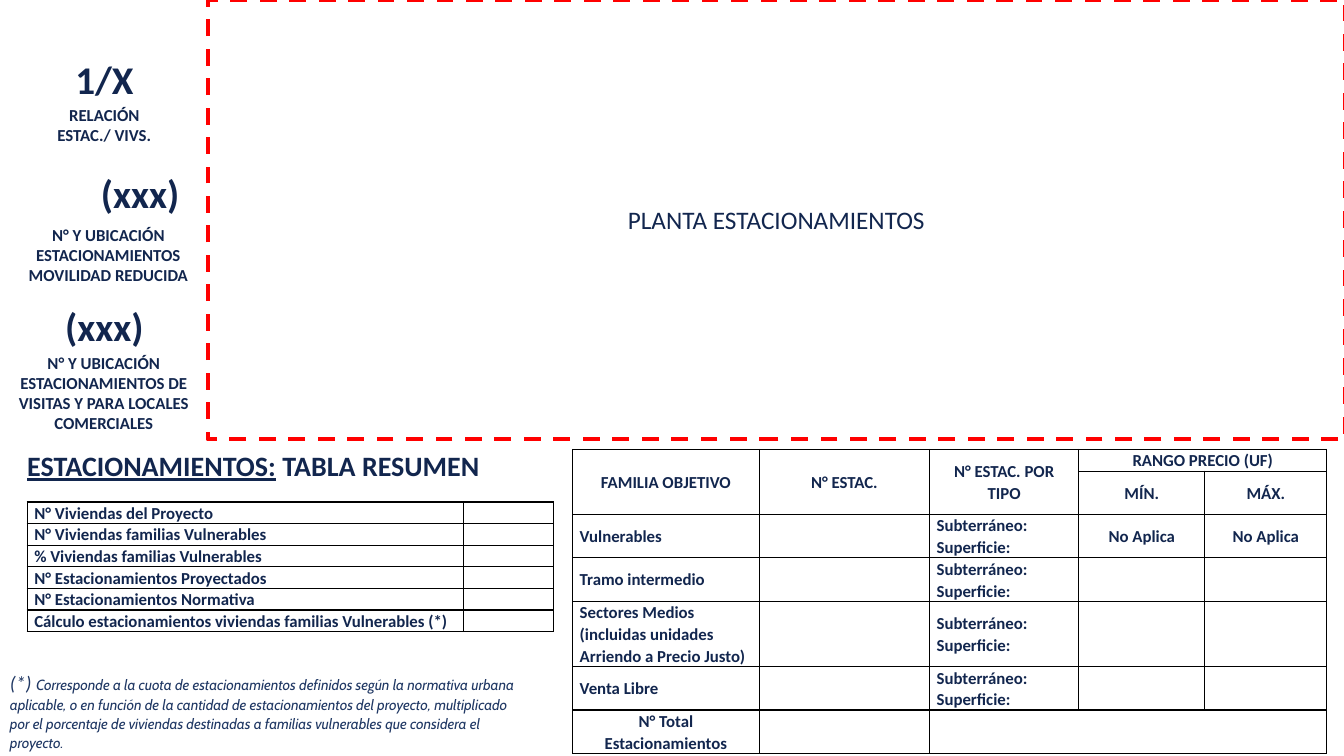
"""Build the parking summary slide with its plan area and two tables."""
from lxml.etree import SubElement
from pptx import Presentation
from pptx.dml.color import RGBColor as RGB
from pptx.enum.dml import MSO_LINE
from pptx.enum.shapes import MSO_SHAPE as Shape
from pptx.enum.text import MSO_ANCHOR as Anchor, MSO_AUTO_SIZE as Auto, PP_ALIGN as Align
from pptx.oxml.ns import qn
from pptx.util import Inches, Pt

COLORS = {"navy": "12264E", "note": "203864", "red": "FF0000", "black": "000000"}
FONT = "Calibri"
PLAN = "PLANTA ESTACIONAMIENTOS"
TITLE = ("ESTACIONAMIENTOS:", " TABLA RESUMEN")
LABELS = [
    ("1/X", 28, (0.64, 0.5, 0.79, 0.57)),
    ("RELACIÓN\nESTAC./ VIVS.", 12, (0.46, 0.99, 1.15, 0.5)),
    ("(xxx)", 28, (0.7, 1.63, 1.38, 0.57)),
    ("N° Y UBICACIÓN ESTACIONAMIENTOS MOVILIDAD REDUCIDA", 12,
     (0.17, 2.18, 1.81, 0.71)),
    ("(xxx)", 28, (0.54, 2.95, 0.99, 0.57)),
    ("N° Y UBICACIÓN ESTACIONAMIENTOS DE VISITAS Y PARA LOCALES COMERCIALES", 12,
     (0, 3.45, 2.06, 0.91)),
]
TYPES = "Subterráneo:\nSuperficie:"
PRICES = [
    ["FAMILIA OBJETIVO", "N° ESTAC.", "N° ESTAC. POR TIPO", "RANGO PRECIO (UF)", ""],
    ["", "", "", "MÍN.", "MÁX."],
    ["Vulnerables", "", TYPES, "No Aplica", "No Aplica"],
    ["Tramo intermedio", "", TYPES, "", ""],
    ["Sectores Medios (incluidas unidades Arriendo a Precio Justo)", "", TYPES, "", ""],
    ["Venta Libre", "", TYPES, "", ""],
    ["N° Total Estacionamientos", "", "", "", ""],
]
PRICE_COLS = [1.85, 1.69, 1.48, 1.25, 1.21]
PRICE_ROWS = [0.21, 0.43, 0.43, 0.43, 0.65, 0.43, 0.43]
MERGES = [(0, 0, 1, 0), (0, 1, 1, 1), (0, 2, 1, 2), (0, 3, 0, 4), (6, 2, 6, 4)]
TOTALS = [[text, ""] for text in (
    "N° Viviendas del Proyecto",
    "N° Viviendas familias Vulnerables",
    "% Viviendas familias Vulnerables",
    "N° Estacionamientos Proyectados",
    "N° Estacionamientos Normativa",
    "Cálculo estacionamientos viviendas familias Vulnerables (*)",
)]
NOTE = [
    ("(*) ", 14, FONT),
    ("Corresponde a la cuota de estacionamientos definidos según la normativa urbana "
     "aplicable, o en función de la cantidad de estacionamientos del proyecto, "
     "multiplicado por el porcentaje de viviendas destinadas a familias vulnerables "
     "que considera el proyecto.", 10.5, "Cabin"),
]


def style(run, size, bold=True, color="navy", name=FONT):
    font = run.font
    font.size, font.bold, font.name = Pt(size), bold, name
    font.color.rgb = RGB.from_string(COLORS[color])


def write(frame, text, size, align, bold=True, space=None):
    frame.text = text
    for para in frame.paragraphs:
        para.alignment = align
        para.line_spacing = space
        for run in para.runs:
            style(run, size, bold)


def add_box(slide, at, wrap=True):
    frame = slide.shapes.add_textbox(*map(Inches, at)).text_frame
    frame.word_wrap = wrap
    frame.auto_size = Auto.SHAPE_TO_FIT_TEXT
    return frame


def edge(cell):
    props = cell._tc.get_or_add_tcPr()
    for pos, side in enumerate(("a:lnL", "a:lnR", "a:lnT", "a:lnB")):
        line = SubElement(props, qn(side), w=str(Pt(1)))
        fill = SubElement(line, qn("a:solidFill"))
        SubElement(fill, qn("a:srgbClr"), val=COLORS["black"])
        props.remove(line)
        props.insert(pos, line)


def add_grid(slide, left, top, rows, cols, heights, anchor, center, merges=()):
    size = map(Inches, (left, top, sum(cols), sum(heights)))
    table = slide.shapes.add_table(len(rows), len(cols), *size).table
    table.first_row = table.horz_banding = False
    for col, width in zip(table.columns, cols):
        col.width = Inches(width)
    for row, height in zip(table.rows, heights):
        row.height = Inches(height)
    for r, row in enumerate(rows):
        for c, text in enumerate(row):
            cell = table.cell(r, c)
            cell.margin_left = cell.margin_right = Inches(0.07)
            cell.margin_top = cell.margin_bottom = 0
            cell.vertical_anchor = anchor
            cell.fill.background()
            edge(cell)
            align = Align.CENTER if center(r, c) else Align.LEFT
            write(cell.text_frame, text, 12, align, space=1.07)
            if not text:
                para = cell.text_frame.paragraphs[0]
                SubElement(para._p, qn("a:endParaRPr"), sz="1200")
    for r, c, end_r, end_c in merges:
        table.cell(r, c).merge(table.cell(end_r, end_c))


def add_title(slide):
    title = slide.shapes.title
    title.left, title.top, title.width, title.height = map(Inches, (0.17, 4.4, 6.02, 0.44))
    frame = title.text_frame
    frame.vertical_anchor = Anchor.TOP
    frame.auto_size = Auto.NONE
    para = frame.paragraphs[0]
    para.alignment = Align.LEFT
    for text in TITLE:
        run = para.add_run()
        run.text = text
        style(run, 20)
        run.font.underline = text == TITLE[0]


def add_plan(slide):
    plan = slide.shapes.add_shape(Shape.RECTANGLE, *map(Inches, (2.06, 0, 11.28, 4.36)))
    plan.shadow.inherit = False
    plan.fill.background()
    plan.line.color.rgb = RGB.from_string(COLORS["red"])
    plan.line.width = Pt(3)
    plan.line.dash_style = MSO_LINE.DASH
    plan.text_frame.vertical_anchor = Anchor.MIDDLE
    write(plan.text_frame, PLAN, 18, Align.CENTER, bold=False)


def add_note(slide):
    para = add_box(slide, (0, 6.59, 5.32, 0.91)).paragraphs[0]
    para.line_spacing = 1.07
    for text, size, name in NOTE:
        run = para.add_run()
        run.text = text
        style(run, size, False, "note", name)
        run.font.italic = True


def main():
    deck = Presentation()
    deck.slide_width, deck.slide_height = Inches(13.33), Inches(7.5)
    slide = deck.slides.add_slide(deck.slide_layouts[5])
    add_plan(slide)
    for text, size, at in LABELS:
        write(add_box(slide, at, size < 20), text, size, Align.CENTER)
    add_title(slide)
    add_grid(slide, 5.68, 4.46, PRICES, PRICE_COLS, PRICE_ROWS, Anchor.MIDDLE,
             lambda r, c: r in (0, 1, 6) or c > 2, MERGES)
    add_grid(slide, 0.27, 4.98, TOTALS, [4.33, 0.89], [0.21] * len(TOTALS), Anchor.TOP,
             lambda r, c: False)
    add_note(slide)
    deck.save("out.pptx")


if __name__ == "__main__":
    main()
